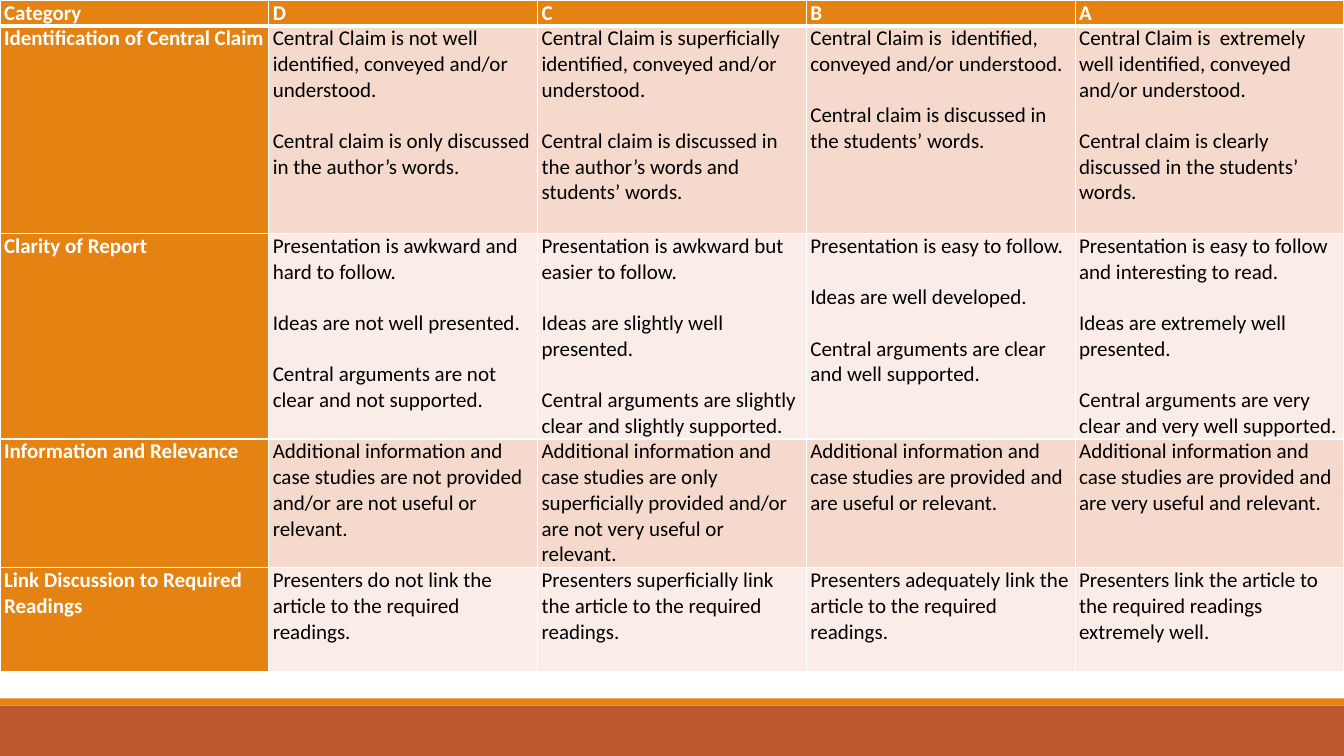
from lxml.etree import SubElement
from pptx import Presentation
from pptx.dml.color import RGBColor as Color
from pptx.enum.shapes import MSO_SHAPE as Shape
from pptx.oxml.ns import qn
from pptx.util import Inches, Pt

COLORS = {"orange": "E48312", "rust": "BD582C", "rose": "F5D9CC",
          "blush": "FAEDE7", "white": "FFFFFF", "black": "000000"}
WIDTH, HEIGHT = 13.33, 7.5
ROW_HEIGHTS = [0.17, 2.06, 1.38, 1.2, 1.03]
TABLE_HEIGHT = 6.6
MARGINS = {"margin_left": Inches(0.04), "margin_right": Inches(0.04),
           "margin_top": 0, "margin_bottom": 0}
PARAGRAPH_GAP = Pt(18.3)

RUBRIC = [
    ["Category", "D", "C", "B", "A"],
    ["Identification of Central Claim",
     "Central Claim is not well identified, conveyed and/or understood.\n"
     "Central claim is only discussed in the author’s words.",
     "Central Claim is superficially identified, conveyed and/or understood.\n"
     "Central claim is discussed in the author’s words and students’ words.",
     "Central Claim is  identified, conveyed and/or understood.\n"
     "Central claim is discussed in the students’ words.",
     "Central Claim is  extremely well identified, conveyed and/or understood.\n"
     "Central claim is clearly discussed in the students’ words."],
    ["Clarity of Report",
     "Presentation is awkward and hard to follow.\n"
     "Ideas are not well presented.\n"
     "Central arguments are not clear and not supported.",
     "Presentation is awkward but easier to follow.\n"
     "Ideas are slightly well presented.\n"
     "Central arguments are slightly clear and slightly supported.",
     "Presentation is easy to follow.\n"
     "Ideas are well developed.\n"
     "Central arguments are clear and well supported.",
     "Presentation is easy to follow and interesting to read.\n"
     "Ideas are extremely well presented.\n"
     "Central arguments are very clear and very well supported."],
    ["Information and Relevance",
     "Additional information and case studies are not provided and/or are not useful or relevant.",
     "Additional information and case studies are only superficially provided "
     "and/or are not very useful or relevant.",
     "Additional information and case studies are provided and are useful or relevant.",
     "Additional information and case studies are provided and are very useful and relevant."],
    ["Link Discussion to Required Readings",
     "Presenters do not link the article to the required readings.",
     "Presenters superficially link the article to the required readings.",
     "Presenters adequately link the article to the required readings.",
     "Presenters link the article to the required readings extremely well."],
]


def paint(fill, name):
    fill.solid()
    fill.fore_color.rgb = Color.from_string(COLORS[name])


def add_border(cell, side, points):
    properties = cell._tc.get_or_add_tcPr()
    line = SubElement(properties, qn(f"a:ln{side}"), w=str(Pt(points)))
    solid = SubElement(line, qn("a:solidFill"))
    SubElement(solid, qn("a:srgbClr"), val=COLORS["white"])


presentation = Presentation()
presentation.slide_width = Inches(WIDTH)
presentation.slide_height = Inches(HEIGHT)
slide = presentation.slides.add_slide(presentation.slide_layouts[6])

for top, height, color in [(7, 0.5, "rust"), (6.93, 0.07, "orange")]:
    bar = slide.shapes.add_shape(Shape.RECTANGLE, 0, Inches(top), Inches(WIDTH), Inches(height))
    bar.shadow.inherit = False
    paint(bar.fill, color)
    bar.line.fill.background()

frame = slide.shapes.add_table(len(RUBRIC), len(RUBRIC[0]), 0, 0,
                               Inches(WIDTH), Inches(TABLE_HEIGHT))
table = frame.table
table.horz_banding = False
for row, height in zip(table.rows, ROW_HEIGHTS):
    row.height = Inches(height)
frame.height = Inches(TABLE_HEIGHT)

for row_index, texts in enumerate(RUBRIC):
    for column_index, text in enumerate(texts):
        cell = table.cell(row_index, column_index)
        heading = row_index == 0 or column_index == 0
        for name, value in MARGINS.items():
            setattr(cell, name, value)
        borders = {"L": 1, "R": 1, "T": 3 if row_index == 1 else 1,
                   "B": 3 if row_index == 0 else 1}
        for side, points in borders.items():
            add_border(cell, side, points)
        band = "rose" if row_index % 2 else "blush"
        paint(cell.fill, "orange" if heading else band)
        cell.text = text
        font_format = {"name": "Calibri", "size": Pt(15), "bold": heading}
        for index, paragraph in enumerate(cell.text_frame.paragraphs):
            paragraph.space_before = PARAGRAPH_GAP if index else 0
            font = paragraph.runs[0].font
            for name, value in font_format.items():
                setattr(font, name, value)
            font.color.rgb = Color.from_string(COLORS["white" if heading else "black"])

presentation.save("out.pptx")
